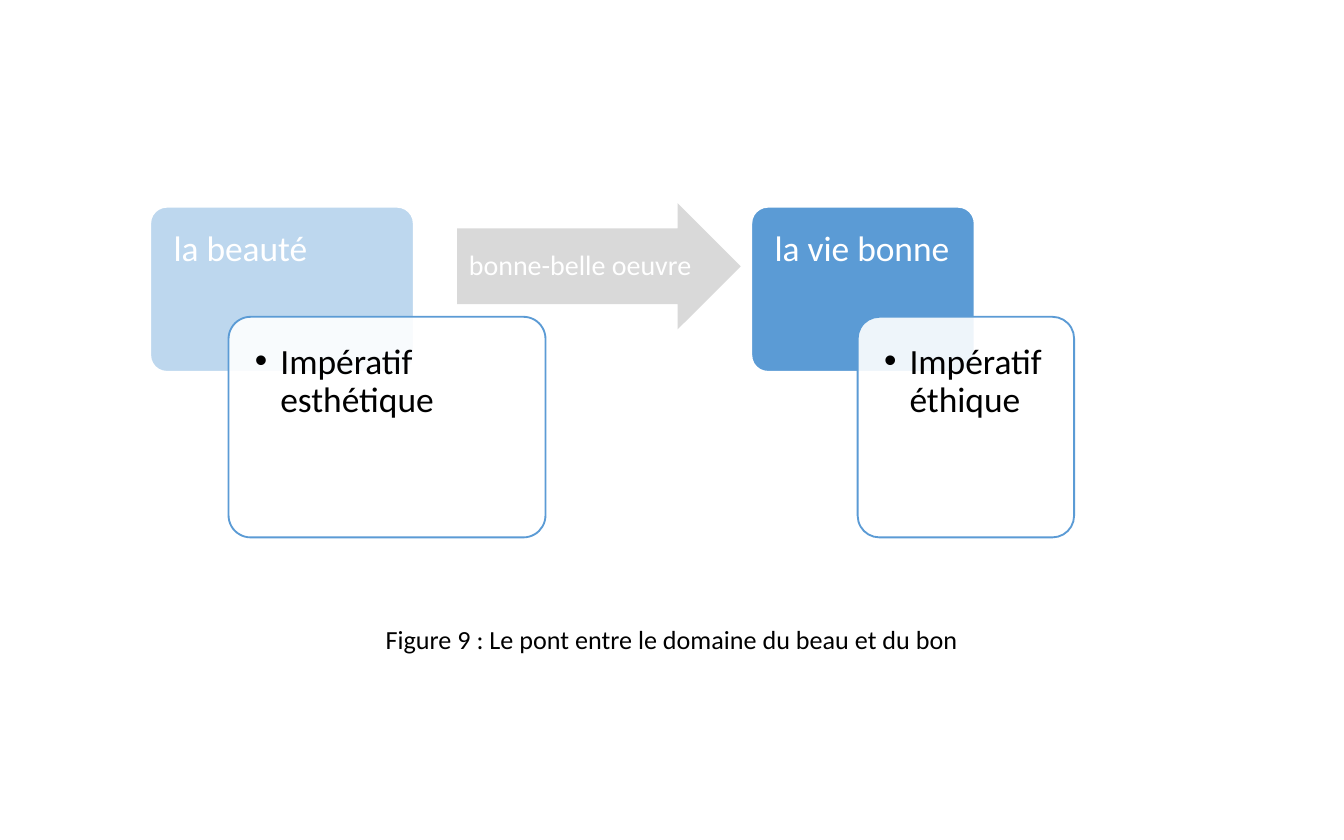
from lxml import etree
from pptx import Presentation
from pptx.dml.color import RGBColor
from pptx.enum import shapes, text
from pptx.oxml.ns import qn
from pptx.util import Cm, Pt

COLOURS = {"pale": "BDD7EE", "blue": "5B9BD5", "grey": "D9D9D9", "white": "FFFFFF", "black": "000000"}
Kind = shapes.MSO_SHAPE


def add_figure(kind, place, fill, line=None, adjustments=(0.1,), opacity=None):
    """Draw a filled shape, with an outline and an opacity in percent if given."""
    figure = page.shapes.add_shape(kind, *map(Cm, place))
    figure.shadow.inherit = False
    for index, value in enumerate(adjustments):
        figure.adjustments[index] = value
    figure.fill.solid()
    figure.fill.fore_color.rgb = RGBColor.from_string(COLOURS[fill])
    if line:
        figure.line.color.rgb = RGBColor.from_string(COLOURS[line])
        figure.line.width = Pt(1)
    else:
        figure.line.fill.background()
    if opacity:
        colour = figure.fill._xPr.find(qn("a:solidFill"))[0]
        etree.SubElement(colour, qn("a:alpha")).set("val", str(opacity * 1000))


def add_text(words, place, size=19, colour="white", margins=(0.38, 0.38, 0.38, 0.38),
             align=text.PP_ALIGN.LEFT, anchor=text.MSO_ANCHOR.TOP, spacing=0.9, bullet=False):
    """Add a one-paragraph text box; margins run left, top, right, bottom."""
    frame = page.shapes.add_textbox(*map(Cm, place)).text_frame
    frame.word_wrap = True
    frame.vertical_anchor = anchor
    frame.margin_left, frame.margin_top, frame.margin_right, frame.margin_bottom = map(Cm, margins)
    para = frame.paragraphs[0]
    para.alignment = align
    para.line_spacing = spacing
    if bullet:
        properties = para._p.get_or_add_pPr()
        properties.set("marL", str(Cm(0.48)))
        properties.set("indent", str(-Cm(0.48)))
        etree.SubElement(properties, qn("a:buFont")).set("typeface", "Arial")
        etree.SubElement(properties, qn("a:buChar")).set("char", "•")
    span = para.add_run()
    span.text = words
    span.font.name = "Calibri"
    span.font.size = Pt(size)
    span.font.color.rgb = RGBColor.from_string(COLOURS[colour])


deck = Presentation()
deck.slide_width, deck.slide_height = Cm(25.4), Cm(15.88)
page = deck.slides.add_slide(deck.slide_layouts[6])

# The two domains: a coloured card, overlapped by a card with its imperative
domains = [
    ("la beauté", "pale", 2.84, 4.98, "Impératif esthétique", 4.32, 5.99),
    ("la vie bonne", "blue", 14.2, 4.22, "Impératif éthique", 16.21, 4.09),
]
for name, fill, left, width, imperative, front_left, front_width in domains:
    add_figure(Kind.ROUNDED_RECTANGLE, (left, 3.91, width, 3.12), fill, line="white")
    add_text(name, (left + 0.06, 3.98, width - 0.12, 1.96), margins=(0.38, 0.38, 0.38, 0.2))
    add_figure(Kind.ROUNDED_RECTANGLE, (front_left, 5.99, front_width, 4.17), "white",
               line="blue", opacity=90)
    add_text(imperative, (front_left + 0.12, 6.12, front_width - 0.24, 3.91),
             colour="black", bullet=True)

# The bridge between them
add_figure(Kind.RIGHT_ARROW, (8.64, 3.84, 5.36, 2.39), "grey", adjustments=(0.6, 0.5))
add_text("bonne-belle oeuvre", (8.64, 4.32, 4.65, 1.45), size=15, margins=(0, 0, 0, 0),
         align=text.PP_ALIGN.CENTER, anchor=text.MSO_ANCHOR.MIDDLE)

add_text("Figure 9 : Le pont entre le domaine du beau et du bon", (6.35, 11.61, 12.7, 0.86),
         size=14, colour="black", margins=(0.25, 0.13, 0.25, 0.13),
         align=text.PP_ALIGN.CENTER, spacing=1.07)

deck.save("out.pptx")
